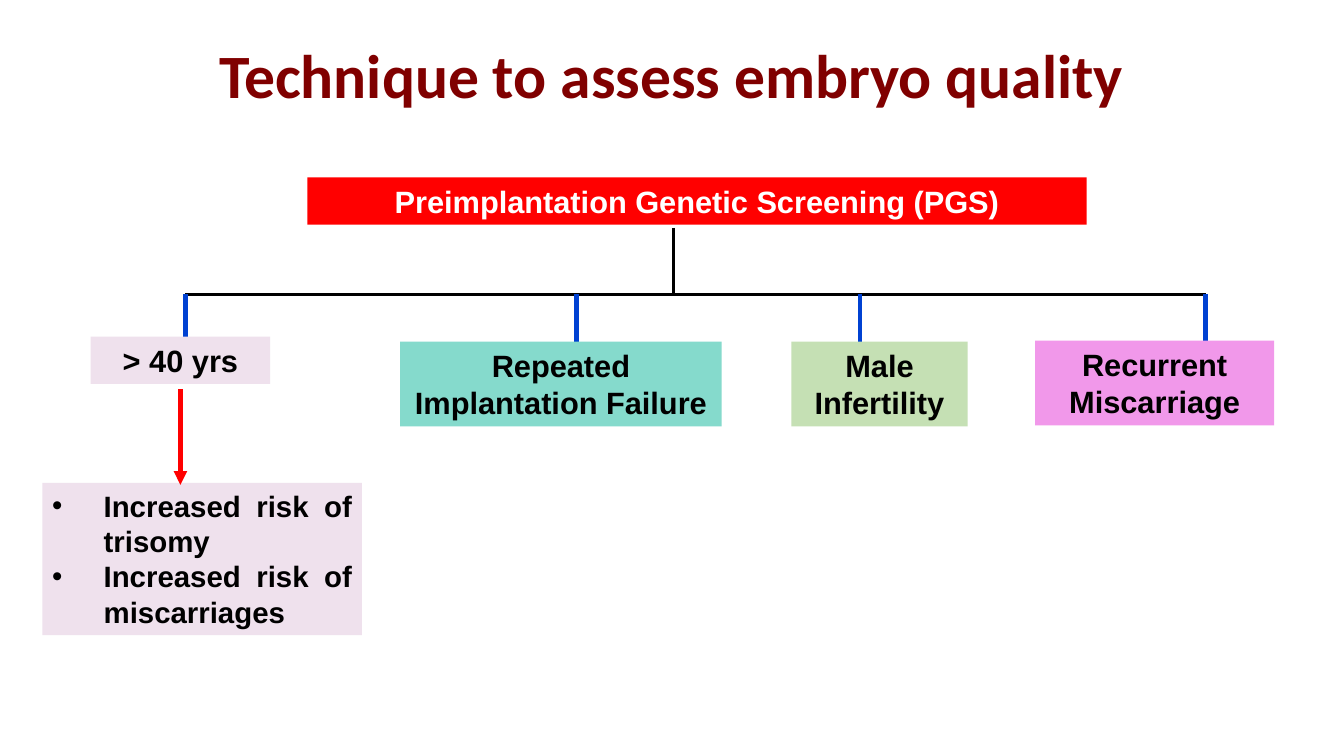
from dataclasses import dataclass

from lxml import etree
from pptx import Presentation
from pptx.dml.color import RGBColor
from pptx.enum.shapes import MSO_CONNECTOR as Conn, MSO_SHAPE as Shape
from pptx.enum.text import MSO_ANCHOR as Anchor, MSO_AUTO_SIZE as Fit, PP_ALIGN as Align
from pptx.oxml.ns import qn
from pptx.util import Pt

BLACK, WHITE, RED, BLUE, MAROON, LILAC = (
    "000000", "FFFFFF", "FF0000", "0041D2", "800000", "EFE1ED")
BAR_Y, DROP_Y = 210.24, 244.08  # crossbar and lower end of the drops
INDENT = 36.75


@dataclass
class Box:
    left: float
    top: float
    width: float
    height: float
    fill: str
    lines: list[str]
    ink: str = BLACK
    size: float = 22
    listed: bool = False


@dataclass
class Line:
    x1: float
    y1: float
    x2: float
    y2: float
    hue: str
    weight: float
    arrow: bool = False


def color(code: str) -> RGBColor:
    return RGBColor.from_string(code)


def style(para, face: str, size: float, ink: str, align: Align) -> None:
    para.alignment = align
    for run in para.runs:
        font = run.font
        font.name, font.size, font.bold = face, Pt(size), True
        font.color.rgb = color(ink)


def add_bullet(para) -> None:
    props = para._p.get_or_add_pPr()
    props.set("marL", str(Pt(INDENT)))
    props.set("indent", str(-Pt(INDENT)))
    etree.SubElement(props, qn("a:buFont"), typeface="Arial")
    etree.SubElement(props, qn("a:buChar"), char="•")


def draw_box(slide, box: Box) -> None:
    rect = slide.shapes.add_shape(
        Shape.RECTANGLE, Pt(box.left), Pt(box.top), Pt(box.width), Pt(box.height))
    rect.shadow.inherit = False
    rect.fill.solid()
    rect.fill.fore_color.rgb = color(box.fill)
    rect.line.fill.background()
    frame = rect.text_frame
    frame.word_wrap = True
    frame.auto_size = Fit.SHAPE_TO_FIT_TEXT
    frame.vertical_anchor = Anchor.TOP
    frame.text = "\n".join(box.lines)
    for para in frame.paragraphs:
        if box.listed:
            add_bullet(para)
        align = Align.JUSTIFY if box.listed else Align.CENTER
        style(para, "Arial", box.size, box.ink, align)


def draw_line(slide, line: Line) -> None:
    link = slide.shapes.add_connector(
        Conn.STRAIGHT, Pt(line.x1), Pt(line.y1), Pt(line.x2), Pt(line.y2))
    link.line.color.rgb = color(line.hue)
    link.line.width = Pt(line.weight)
    if line.arrow:
        etree.SubElement(link.line._get_or_add_ln(), qn("a:tailEnd"), type="triangle")
    etree.SubElement(link._element.spPr, qn("a:effectLst"))


def draw_title(slide, text: str) -> None:
    title = slide.shapes.title
    title.left, title.top, title.width, title.height = Pt(66), Pt(28.8), Pt(828), Pt(44.64)
    frame = title.text_frame
    frame.word_wrap = True
    frame.auto_size = Fit.NONE
    frame.vertical_anchor = Anchor.TOP
    frame.text = text
    para = frame.paragraphs[0]
    para.line_spacing = 0.9
    style(para, "Calibri", 44, MAROON, Align.CENTER)


def main() -> None:
    deck = Presentation()
    deck.slide_width, deck.slide_height = Pt(960), Pt(540)
    slide = deck.slides.add_slide(deck.slide_layouts[5])
    draw_title(slide, "Technique to assess embryo quality")

    # Tree lines: stem, crossbar, drops
    drops = [132.48, 411.84, 614.16, 861.12]
    lines = [
        Line(480.96, 162.72, 480.96, BAR_Y, BLACK, 2.25),
        Line(drops[0], BAR_Y, drops[-1], BAR_Y, BLACK, 2.25),
        *(Line(x, BAR_Y, x, DROP_Y, BLUE, 3.25) for x in drops),
    ]
    for line in lines:
        draw_line(slide, line)

    # Screening, its four indications, and the risks
    boxes = [
        Box(219.6, 126.72, 556.56, 33.84, RED,
            ["Preimplantation Genetic Screening (PGS)"], WHITE),
        Box(64.8, 240.48, 128.16, 33.84, LILAC, ["> 40 yrs"]),
        Box(285.84, 244.08, 229.68, 60.48, "85DACC", ["Repeated Implantation Failure"]),
        Box(565.2, 244.08, 126, 60.48, "C5E0B4", ["Male Infertility"]),
        Box(739.44, 243.36, 170.64, 60.48, "F198EA", ["Recurrent Miscarriage"]),
        Box(30.24, 344.88, 228.24, 108.72, LILAC,
            ["Increased risk of trisomy", "Increased risk of miscarriages"],
            size=21, listed=True),
    ]
    for box in boxes:
        draw_box(slide, box)

    # Arrow from age to risks
    draw_line(slide, Line(128.88, 277.92, 128.88, 346.32, RED, 3.25, arrow=True))
    deck.save("out.pptx")


if __name__ == "__main__":
    main()
